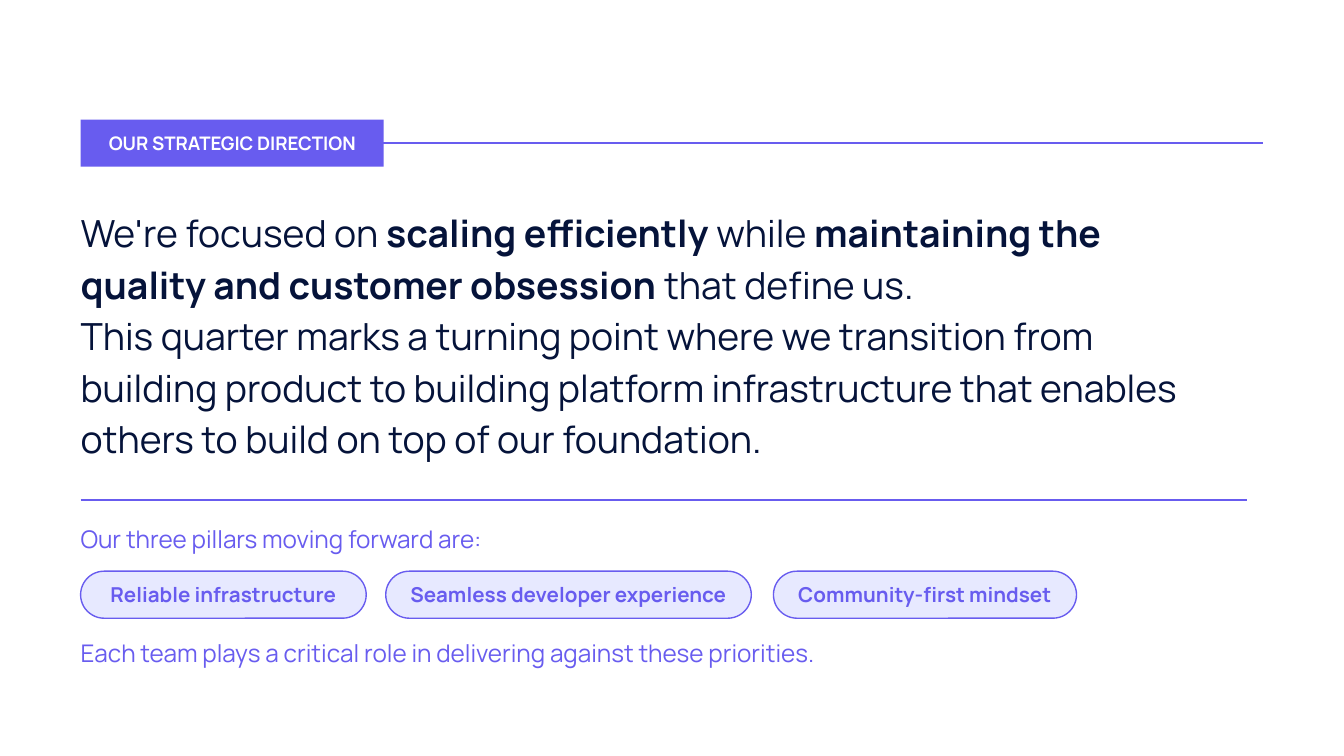
from dataclasses import dataclass

from lxml import etree
from pptx import Presentation
from pptx.dml.color import RGBColor
from pptx.enum.shapes import MSO_CONNECTOR, MSO_SHAPE
from pptx.enum.text import MSO_ANCHOR, MSO_AUTO_SIZE, PP_ALIGN
from pptx.oxml.ns import qn
from pptx.util import Emu, Pt

RECT, PILL = MSO_SHAPE.RECTANGLE, MSO_SHAPE.ROUNDED_RECTANGLE
STRAIGHT = MSO_CONNECTOR.STRAIGHT
MIDDLE, CENTER = MSO_ANCHOR.MIDDLE, PP_ALIGN.CENTER
FIXED = MSO_AUTO_SIZE.NONE
PX = 4572


@dataclass(frozen=True)
class Theme:
    """Colours, type sizes and font of the slide."""
    font: str = "Manrope"
    accent: RGBColor = RGBColor(0x68, 0x5C, 0xEF)
    tint: RGBColor = RGBColor(0xE7, 0xE9, 0xFF)
    ink: RGBColor = RGBColor(0x05, 0x13, 0x3A)
    white: RGBColor = RGBColor(0xFF, 0xFF, 0xFF)
    statement: int = 20
    body: int = 13
    pill: int = 11
    label: int = 10
    rule: float = 0.75


class Deck:
    """Draws styled elements on the current slide."""

    def __init__(self, prs, theme):
        """Start a blank slide."""
        self.theme = theme
        self.s = prs.slides.add_slide(prs.slide_layouts[6])

    def px(self, *values):
        """Turn px lengths into EMU."""
        return [Emu(v * PX) for v in values]

    def run(self, p, text, size, color, bold=False):
        """Add one styled run to a paragraph."""
        r = p.add_run()
        r.text = text
        r.font.name = self.theme.font
        r.font.size = Pt(size)
        r.font.bold = bold
        r.font.color.rgb = color

    def frame(self, sp, inset):
        """Set wrapping and equal insets, and return the text frame."""
        tf = sp.text_frame
        tf.word_wrap = True
        tf.auto_size = FIXED
        tf.margin_left = tf.margin_top = tf.margin_right = tf.margin_bottom = Emu(inset * PX)
        return tf

    def text(self, x, y, w, h, lines, size, color, spacing=None):
        """Add a text box of lines, each a list of (text, bold) runs."""
        tf = self.frame(self.s.shapes.add_textbox(*self.px(x, y, w, h)), 0)
        p = tf.paragraphs[0]
        if spacing:
            p.line_spacing = spacing
        for i, line in enumerate(lines):
            if i:
                p.add_line_break()
            for text, bold in line:
                self.run(p, text, size, color, bold)

    def box(self, kind, x, y, w, h, text, size, color, fill, line=None):
        """Add a filled shape with a centred bold label."""
        sp = self.s.shapes.add_shape(kind, *self.px(x, y, w, h))
        sp.shadow.inherit = False
        sp.fill.solid()
        sp.fill.fore_color.rgb = fill
        if line is None:
            sp.line.fill.background()
        else:
            sp.line.color.rgb = line
            sp.line.width = Pt(self.theme.rule)
        if kind == PILL:
            sp.adjustments[0] = 0.5
        tf = self.frame(sp, 20)
        tf.vertical_anchor = MIDDLE
        p = tf.paragraphs[0]
        p.alignment = CENTER
        self.run(p, text, size, color, True)

    def rule(self, x1, x2, y):
        """Add a horizontal accent line."""
        c = self.s.shapes.add_connector(STRAIGHT, *self.px(x1, y, x2, y))
        c.line.color.rgb = self.theme.accent
        c.line.width = Pt(self.theme.rule)
        etree.SubElement(c._element.spPr, qn("a:effectLst"))


def main():
    """Build the strategic direction slide."""
    prs = Presentation()
    prs.slide_width, prs.slide_height = Emu(2000 * PX), Emu(1125 * PX)
    t = Theme()
    d = Deck(prs, t)
    left, bar_h = 120, 70

    d.rule(144, 1880, 213)
    statement = [
        [("We're focused on ", False), ("scaling efficiently ", True),
         ("while ", False), ("maintaining the quality and customer obsession", True),
         (" that define us. ", False)],
        [("This quarter marks a turning point where we transition from building "
          "product to building platform infrastructure that enables others to "
          "build on top of our foundation.", False)],
    ]
    d.text(left, 303, 1708, 400, statement, t.statement, t.ink, 1.15)
    d.text(left, 780, 1800, 70, [[("Our three pillars moving forward are:", False)]],
           t.body, t.accent)
    d.box(RECT, left, 178, 451, bar_h, "OUR STRATEGIC DIRECTION", t.label, t.white, t.accent)
    d.rule(left, 1856, 744)

    pillars = [
        (left, 425, "Reliable infrastructure"),
        (574, 544, "Seamless developer experience"),
        (1151, 451, "Community-first mindset"),
    ]
    for x, w, name in pillars:
        d.box(PILL, x, 850, w, bar_h, name, t.pill, t.accent, t.tint, t.accent)

    closing = "Each team plays a critical role in delivering against these priorities."
    d.text(left, 950, 1176, 44, [[(closing, False)]], t.body, t.accent)
    prs.save("out.pptx")


if __name__ == "__main__":
    main()
